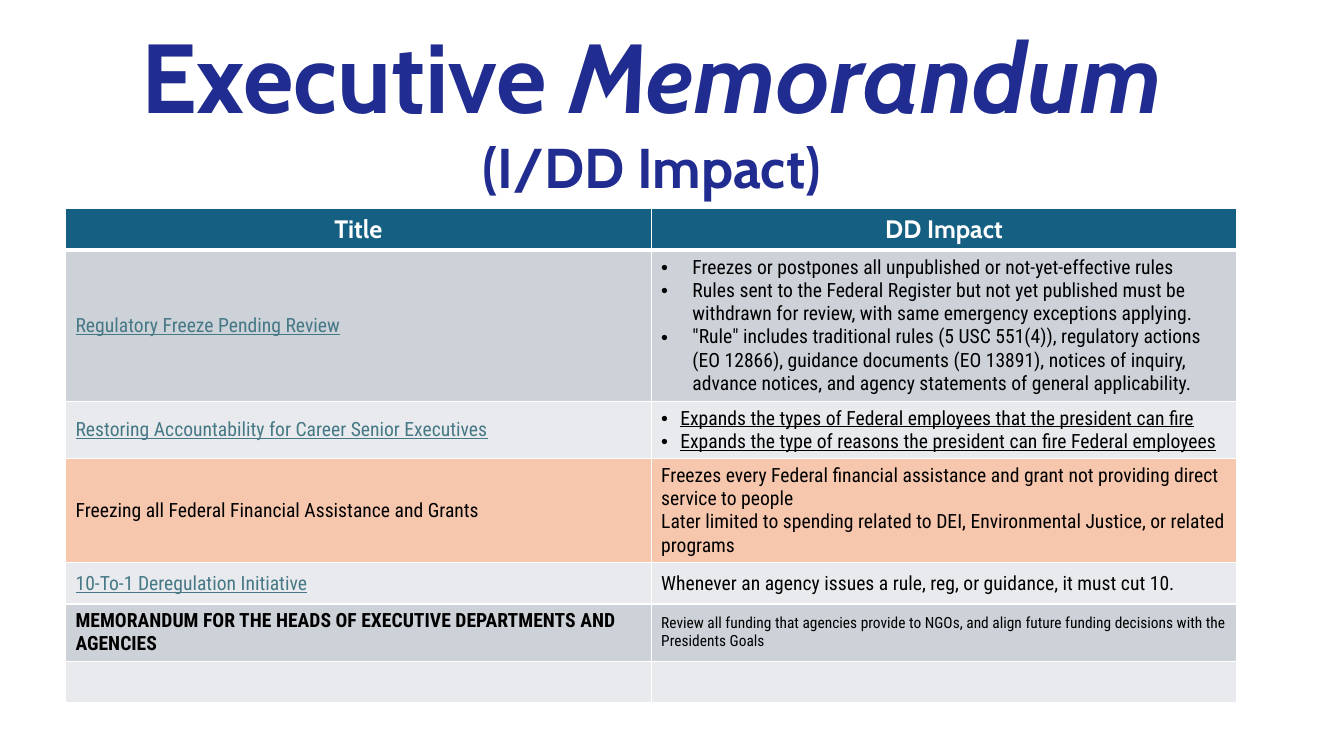
from dataclasses import dataclass

from lxml.etree import SubElement
from pptx import Presentation
from pptx.dml.color import RGBColor
from pptx.enum.text import MSO_ANCHOR, MSO_AUTO_SIZE, PP_ALIGN
from pptx.oxml import parse_xml
from pptx.oxml.ns import nsdecls, qn
from pptx.util import Inches, Pt


@dataclass(frozen=True)
class Theme:
    heading_font: str = "Cabin"
    body_font: str = "Roboto Condensed"
    navy: str = "202C8F"
    teal: str = "156082"
    link: str = "467886"
    ink: str = "000000"
    white: str = "FFFFFF"
    grey: str = "CCD2D8"
    pale: str = "E8EAED"
    peach: str = "F6C6AD"
    title_size: int = 70
    subtitle_size: int = 40
    header_size: int = 18
    body_size: int = 14
    small_size: int = 11


@dataclass(frozen=True)
class Entry:
    lines: tuple
    color: str = Theme.ink
    size: int = Theme.body_size
    bold: bool = False
    underline: bool = False
    indent: float = 0


THEME = Theme()
WIDTH, HEIGHT = Inches(13.333), Inches(7.5)
ROW_HEIGHT = Inches(0.41)


def linked(text):
    return Entry((text,), THEME.link, underline=True)


MEMORANDA = [
    (THEME.grey, linked("Regulatory Freeze Pending Review"), Entry((
        "Freezes or postpones all unpublished or not-yet-effective rules",
        "Rules sent to the Federal Register but not yet published must be withdrawn "
        "for review, with same emergency exceptions applying.",
        '"Rule" includes traditional rules (5 USC 551(4)), regulatory actions (EO 12866), '
        "guidance documents (EO 13891), notices of inquiry, advance notices, "
        "and agency statements of general applicability.",
    ), indent=0.31)),
    (THEME.pale, linked("Restoring Accountability for Career Senior Executives"), Entry((
        "Expands the types of Federal employees that the president can fire",
        "Expands the type of reasons the president can fire Federal employees",
    ), underline=True, indent=0.19)),
    (THEME.peach, Entry(("Freezing all Federal Financial Assistance and Grants",)), Entry((
        "Freezes every Federal financial assistance and grant not providing direct "
        "service to people\nLater limited to spending related to DEI, "
        "Environmental Justice, or related programs",
    ))),
    (THEME.pale, linked("10-To-1 Deregulation Initiative"), Entry((
        "Whenever an agency issues a rule, reg, or guidance, it must cut 10.",
    ))),
    (THEME.grey, Entry((
        "MEMORANDUM FOR THE HEADS OF EXECUTIVE DEPARTMENTS AND AGENCIES",
    ), bold=True), Entry((
        "Review all funding that agencies provide to NGOs, and align future funding "
        "decisions with the Presidents Goals",
    ), size=THEME.small_size)),
    (THEME.pale, None, None),
]


def style(run, font, size, color, bold=False, italic=False, underline=False):
    run.font.name = font
    run.font.size = Pt(size)
    run.font.color.rgb = RGBColor.from_string(color)
    run.font.bold = bold
    run.font.italic = italic
    run.font.underline = underline


def add_bullet(paragraph, indent):
    properties = paragraph._p.get_or_add_pPr()
    properties.set("marL", str(Inches(indent)))
    properties.set("indent", str(-Inches(indent)))
    SubElement(properties, qn("a:buFont"), typeface="Arial")
    SubElement(properties, qn("a:buChar"), char="•")


def paint_cell(cell, fill, bottom_width=1):
    cell.fill.solid()
    cell.fill.fore_color.rgb = RGBColor.from_string(fill)
    borders = {"lnL": 1, "lnR": 1, "lnT": 1, "lnB": bottom_width}
    for position, (side, width) in enumerate(borders.items()):
        cell._tc.get_or_add_tcPr().insert(position, parse_xml(
            f'<a:{side} {nsdecls("a")} w="{Pt(width)}"><a:solidFill>'
            f'<a:srgbClr val="{THEME.white}"/></a:solidFill></a:{side}>'))


def write_entry(cell, entry):
    cell.vertical_anchor = MSO_ANCHOR.MIDDLE
    frame = cell.text_frame
    for number, line in enumerate(entry.lines):
        paragraph = frame.add_paragraph() if number else frame.paragraphs[0]
        paragraph.text = line
        if entry.indent:
            add_bullet(paragraph, entry.indent)
        for run in paragraph.runs:
            style(run, THEME.body_font, entry.size, entry.color,
                  bold=entry.bold, underline=entry.underline)


def write_header(cell, heading):
    paint_cell(cell, THEME.teal, bottom_width=3)
    cell.text_frame.text = heading
    paragraph = cell.text_frame.paragraphs[0]
    paragraph.alignment = PP_ALIGN.CENTER
    style(paragraph.runs[0], THEME.heading_font, THEME.header_size, THEME.white, bold=True)


def write_title(title):
    title.left, title.top = int(WIDTH * 0.085), int(HEIGHT * 0.0133)
    title.width, title.height = int(WIDTH * 0.8), int(HEIGHT * 0.26)
    frame = title.text_frame
    frame.word_wrap = True
    frame.auto_size = MSO_AUTO_SIZE.SHAPE_TO_FIT_TEXT
    frame.vertical_anchor = MSO_ANCHOR.TOP
    frame.text = "Executive "
    headline, subtitle = frame.paragraphs[0], frame.add_paragraph()
    headline.add_run().text = "Memorandum"
    subtitle.text = "(I/DD Impact)"
    for paragraph, size in ((headline, THEME.title_size), (subtitle, THEME.subtitle_size)):
        paragraph.alignment = PP_ALIGN.CENTER
        paragraph.line_spacing = 1.0
        paragraph.space_before = Pt(0)
        for run in paragraph.runs:
            style(run, THEME.heading_font, size, THEME.navy, bold=True)
    headline.runs[1].font.italic = True


def add_memoranda(slide):
    row_count = len(MEMORANDA) + 1
    memoranda = slide.shapes.add_table(
        row_count, 2, Inches(0.65), Inches(2.07),
        Inches(11.62), ROW_HEIGHT * row_count).table
    memoranda.horz_banding = False
    for row in memoranda.rows:
        row.height = ROW_HEIGHT
    for column, heading in enumerate(("Title", "DD Impact")):
        write_header(memoranda.cell(0, column), heading)
    memoranda.cell(0, 1).vertical_anchor = MSO_ANCHOR.MIDDLE
    for row, (fill, *entries) in enumerate(MEMORANDA, start=1):
        for column, entry in enumerate(entries):
            cell = memoranda.cell(row, column)
            paint_cell(cell, fill)
            if entry:
                write_entry(cell, entry)


def main():
    deck = Presentation()
    deck.slide_width, deck.slide_height = WIDTH, HEIGHT
    slide = deck.slides.add_slide(deck.slide_layouts.get_by_name("Title Only"))
    write_title(slide.shapes.title)
    add_memoranda(slide)
    deck.save("out.pptx")


if __name__ == "__main__":
    main()
